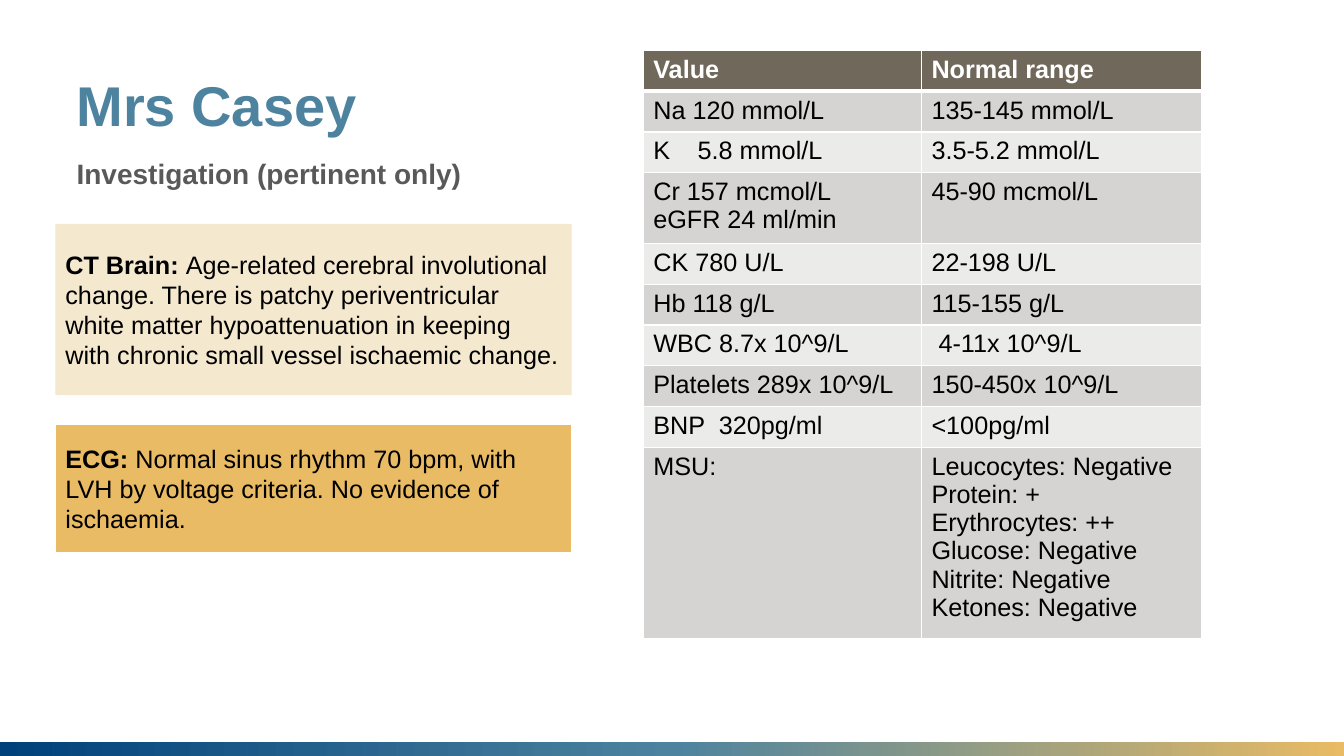
from lxml import etree
from pptx import Presentation, util as u
from pptx.dml.color import RGBColor
from pptx.enum import shapes, text
from pptx.oxml.ns import qn

NAVY = RGBColor(0x00, 0x41, 0x7B)
TEAL = RGBColor(0x4D, 0x83, 0x9F)
GOLD = RGBColor(0xE8, 0xBB, 0x64)
CREAM = RGBColor(0xF4, 0xE8, 0xCF)
BROWN = RGBColor(0x70, 0x68, 0x5B)
DARK = RGBColor(0xD5, 0xD4, 0xD2)
LIGHT = RGBColor(0xEB, 0xEB, 0xEA)
GREY = RGBColor(0x59, 0x59, 0x59)
BLACK = RGBColor(0, 0, 0)
WHITE = RGBColor(0xFF, 0xFF, 0xFF)

ROWS = [
    ("Value", "Normal range"),
    ("Na 120 mmol/L", "135-145 mmol/L"),
    ("K\t5.8 mmol/L", "3.5-5.2 mmol/L"),
    ("Cr 157 mcmol/L\neGFR 24 ml/min", "45-90 mcmol/L"),
    ("CK 780 U/L", "22-198 U/L"),
    ("Hb 118 g/L", "115-155 g/L"),
    ("WBC 8.7x 10^9/L", " 4-11x 10^9/L"),
    ("Platelets 289x 10^9/L", "150-450x 10^9/L"),
    ("BNP\t320pg/ml", "<100pg/ml"),
    ("MSU:", "Leucocytes: Negative\nProtein: +\nErythrocytes: ++\n"
             "Glucose: Negative\nNitrite: Negative\nKetones: Negative"),
]
TABS = {"K": 0.44, "BNP": 0.65}  # inches from the cell's text edge


def write(frame, words, lead="", size=18, color=BLACK, bold=False,
          before=0, line=None):
    """Fill a frame, one paragraph a line, after an optional bold lead."""
    frame.word_wrap = True
    for i, part in enumerate(words.split("\n")):
        para = frame.add_paragraph() if i else frame.paragraphs[0]
        para.alignment = text.PP_ALIGN.LEFT
        para.space_before = u.Pt(before)
        if line:
            para.line_spacing = line
        if "\t" in part:
            tabs = etree.SubElement(para._p.get_or_add_pPr(), qn("a:tabLst"))
            stop = u.Inches(TABS[part.split("\t")[0]])
            etree.SubElement(tabs, qn("a:tab"), pos=str(stop), algn="l")
        for chunk, heavy in ((lead, True), (part, bold)):
            if chunk:
                run = para.add_run()
                run.text = chunk
                run.font.name = "Arial"
                run.font.size = u.Pt(size)
                run.font.bold = heavy
                run.font.color.rgb = color


class Deck:
    """Lengths are percentages of the slide's width and height."""

    def __init__(self):
        self.prs = Presentation()
        self.prs.slide_width = u.Inches(13.33)
        self.prs.slide_height = u.Inches(7.5)
        self.slide = self.prs.slides.add_slide(self.prs.slide_layouts[6])

    def wide(self, share):
        return round(self.prs.slide_width * share / 100)

    def high(self, share):
        return round(self.prs.slide_height * share / 100)

    def place(self, x, y, w, h):
        return self.wide(x), self.high(y), self.wide(w), self.high(h)

    def rect(self, box, fill=None, line=None):
        shape = self.slide.shapes.add_shape(
            shapes.MSO_SHAPE.RECTANGLE, *self.place(*box))
        shape.shadow.inherit = False
        if fill:
            shape.fill.solid()
            shape.fill.fore_color.rgb = fill
        if line:
            shape.line.color.rgb = line
            shape.line.width = u.Pt(1)
        else:
            shape.line.fill.background()
        return shape

    def band(self, box, colors):
        shape = self.rect(box)
        shape.fill.gradient()
        shape.fill.gradient_angle = 0
        stops = shape._element.spPr.find(".//" + qn("a:gsLst"))
        stops.clear()
        for i, color in enumerate(colors):
            pos = 100000 * i // (len(colors) - 1)
            stop = etree.SubElement(stops, qn("a:gs"), pos=str(pos))
            etree.SubElement(stop, qn("a:srgbClr"), val=str(color))

    def label(self, box, words, inset=0, anchor=text.MSO_ANCHOR.TOP, **form):
        frame = self.slide.shapes.add_textbox(*self.place(*box)).text_frame
        frame.margin_left = frame.margin_right = 0
        frame.margin_top = frame.margin_bottom = u.Inches(inset)
        frame.vertical_anchor = anchor
        write(frame, words, **form)

    def card(self, box, lead, words, fill, line=None):
        frame = self.rect(box, fill, line).text_frame
        frame.vertical_anchor = text.MSO_ANCHOR.MIDDLE
        write(frame, words, lead=lead)

    def edge(self, cell, top, low):
        props = cell._tc.get_or_add_tcPr()
        for side, width in (("L", 1), ("R", 1), ("T", top), ("B", low)):
            line = etree.SubElement(props, qn("a:ln" + side),
                                    w=str(u.Pt(width)))
            fill = etree.SubElement(line, qn("a:solidFill"))
            etree.SubElement(fill, qn("a:srgbClr"), val=str(WHITE))

    def table(self, x, y, cols, rows, data):
        box = self.place(x, y, sum(cols), sum(rows))
        grid = self.slide.shapes.add_table(
            len(rows), len(cols), *box).table
        for col, share in zip(grid.columns, cols):
            col.width = self.wide(share)
        for r, (share, words) in enumerate(zip(rows, data)):
            grid.rows[r].height = self.high(share)
            head = r == 0
            for c, word in enumerate(words):
                cell = grid.cell(r, c)
                self.edge(cell, 3 if r == 1 else 1, 3 if head else 1)
                cell.fill.solid()
                cell.fill.fore_color.rgb = (
                    BROWN if head else DARK if r % 2 else LIGHT)
                write(cell.text_frame, word, bold=head,
                      color=WHITE if head else BLACK)


def main():
    deck = Deck()

    # Bottom band
    deck.band((0, 98.13, 100, 1.87), (NAVY, TEAL, GOLD))

    # Headings
    deck.label((5.7, 20.67, 43.44, 62.53), "Investigation (pertinent only)",
               size=20, color=GREY, bold=True, before=10)
    deck.label((5.7, 8.27, 88.6, 12.27), "Mrs Casey", inset=0.16,
               anchor=text.MSO_ANCHOR.BOTTOM, size=40, color=TEAL,
               bold=True, line=0.9)

    # Findings
    deck.card((4.13, 56.13, 38.41, 16.93), "ECG: ",
              "Normal sinus rhythm 70 bpm, with LVH by voltage criteria. "
              "No evidence of ischaemia.", GOLD, WHITE)
    deck.card((4.13, 29.6, 38.41, 22.67), "CT Brain: ",
              "Age-related cerebral involutional change. There is patchy "
              "periventricular white matter hypoattenuation in keeping with "
              "chronic small vessel ischaemic change.", CREAM)

    # Blood and urine results
    rows = [5.4] * len(ROWS)
    rows[3], rows[-1] = 8.7, 23.6
    deck.table(47.86, 6.67, (20.7, 20.85), rows, ROWS)

    deck.prs.save("out.pptx")


if __name__ == "__main__":
    main()
